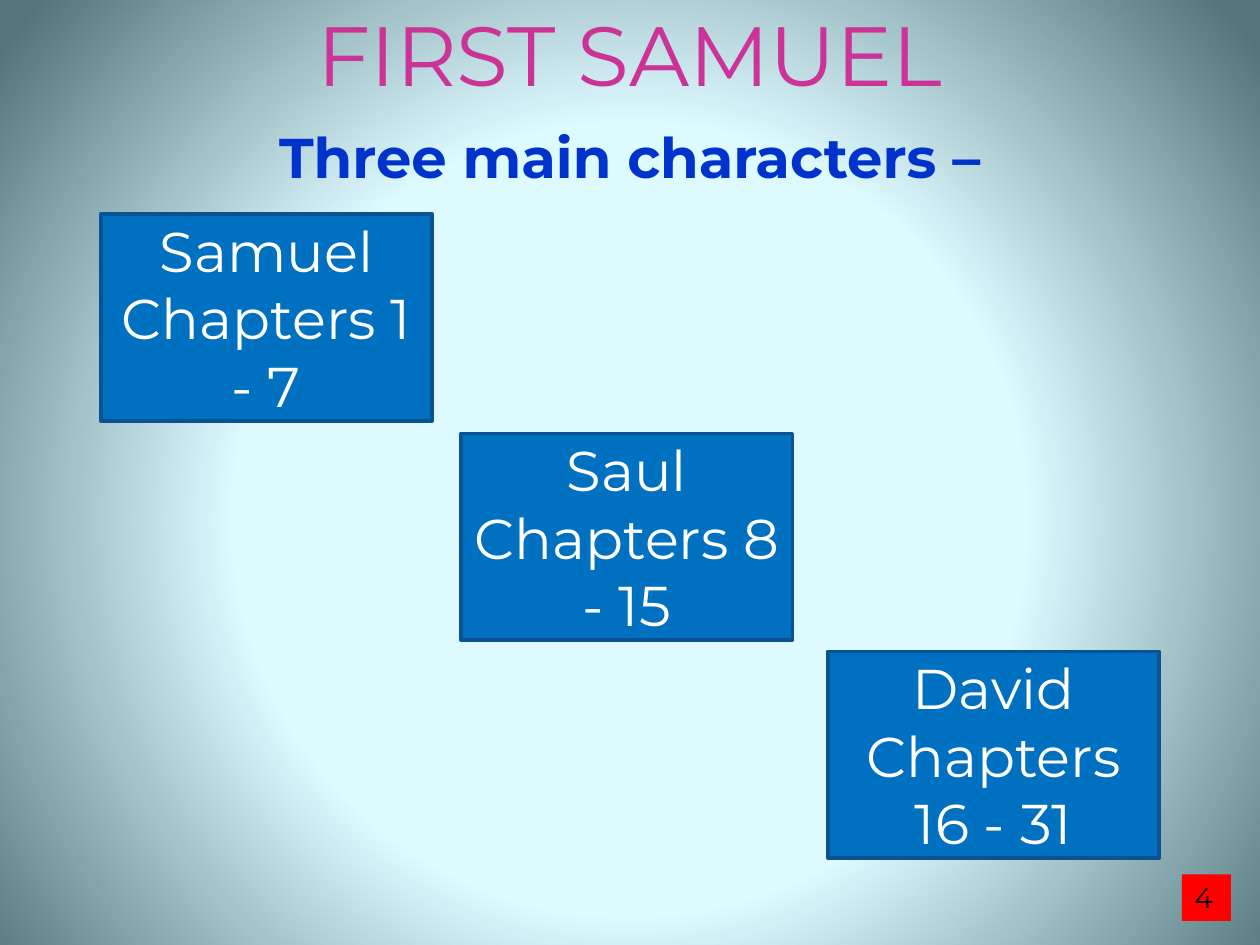
from pptx import Presentation
from pptx.dml.color import RGBColor
from pptx.enum.shapes import MSO_SHAPE
from pptx.enum.text import MSO_ANCHOR, MSO_AUTO_SIZE, PP_ALIGN
from pptx.oxml import parse_xml
from pptx.oxml.ns import nsdecls, qn
from pptx.util import Inches, Pt


def rgb(value):
    return RGBColor.from_string(value)


def write(shape, lines, size, color, align=PP_ALIGN.CENTER, bold=False):
    frame = shape.text_frame
    frame.word_wrap = True
    frame.text = "\n".join(lines)
    for paragraph in frame.paragraphs:
        paragraph.alignment = align
        paragraph.font.name = "Montserrat"
        paragraph.font.size = Pt(size)
        paragraph.font.bold = bold
        paragraph.font.color.rgb = rgb(color)


prs = Presentation()
prs.slide_width = Inches(10)
prs.slide_height = Inches(7.5)
slide = prs.slides.add_slide(prs.slide_layouts[6])

# Radial background: light centre, dark corners
slide.background.fill.gradient()
gradient = slide.element.find(".//" + qn("a:gradFill"))
for child in list(gradient):
    gradient.remove(child)
stops = "".join(
    f'<a:gs pos="{percent * 1000}"><a:srgbClr val="{color}"/></a:gs>'
    for percent, color in [(0, "DEFBFF"), (50, "DDFAFF"), (100, "52767C")]
)
gradient.append(parse_xml(f'<a:gsLst {nsdecls("a")}>{stops}</a:gsLst>'))
gradient.append(parse_xml(
    f'<a:path {nsdecls("a")} path="circle">'
    '<a:fillToRect l="10000" t="110000" r="10000" b="100000"/></a:path>'
))

# Headings
for text, top, height, size, color, bold in [
    ("FIRST SAMUEL", -0.03, 0.91, 48, "CC3399", False),
    ("Three main characters –", 0.92, 0.64, 32, "0033CC", True),
]:
    heading = slide.shapes.add_textbox(0, Inches(top), prs.slide_width, Inches(height))
    write(heading, [text], size, color, bold=bold)
    heading.text_frame.auto_size = MSO_AUTO_SIZE.SHAPE_TO_FIT_TEXT

# Page number
page_number = slide.shapes.add_textbox(Inches(9.38), Inches(6.94), Inches(0.39), Inches(0.37))
page_number.fill.solid()
page_number.fill.fore_color.rgb = rgb("FF0000")
write(page_number, ["4"], 16, "000000", align=PP_ALIGN.LEFT)
page_number.text_frame.auto_size = MSO_AUTO_SIZE.SHAPE_TO_FIT_TEXT

# Characters, stepping down to the right
for name, chapters, left, top in [
    ("Samuel", "1 - 7", 0.8, 1.7),
    ("Saul", "8 - 15", 3.66, 3.44),
    ("David", "16 - 31", 6.57, 5.17),
]:
    character = slide.shapes.add_shape(
        MSO_SHAPE.RECTANGLE, Inches(left), Inches(top), Inches(2.63), Inches(1.64)
    )
    character.shadow.inherit = False
    character.fill.solid()
    character.fill.fore_color.rgb = rgb("0070C0")
    character.line.color.rgb = rgb("0B5292")
    character.line.width = Pt(2)
    character.text_frame.vertical_anchor = MSO_ANCHOR.MIDDLE
    write(character, [name, f"Chapters {chapters}"], 32, "FFFFFF")

prs.save("out.pptx")
